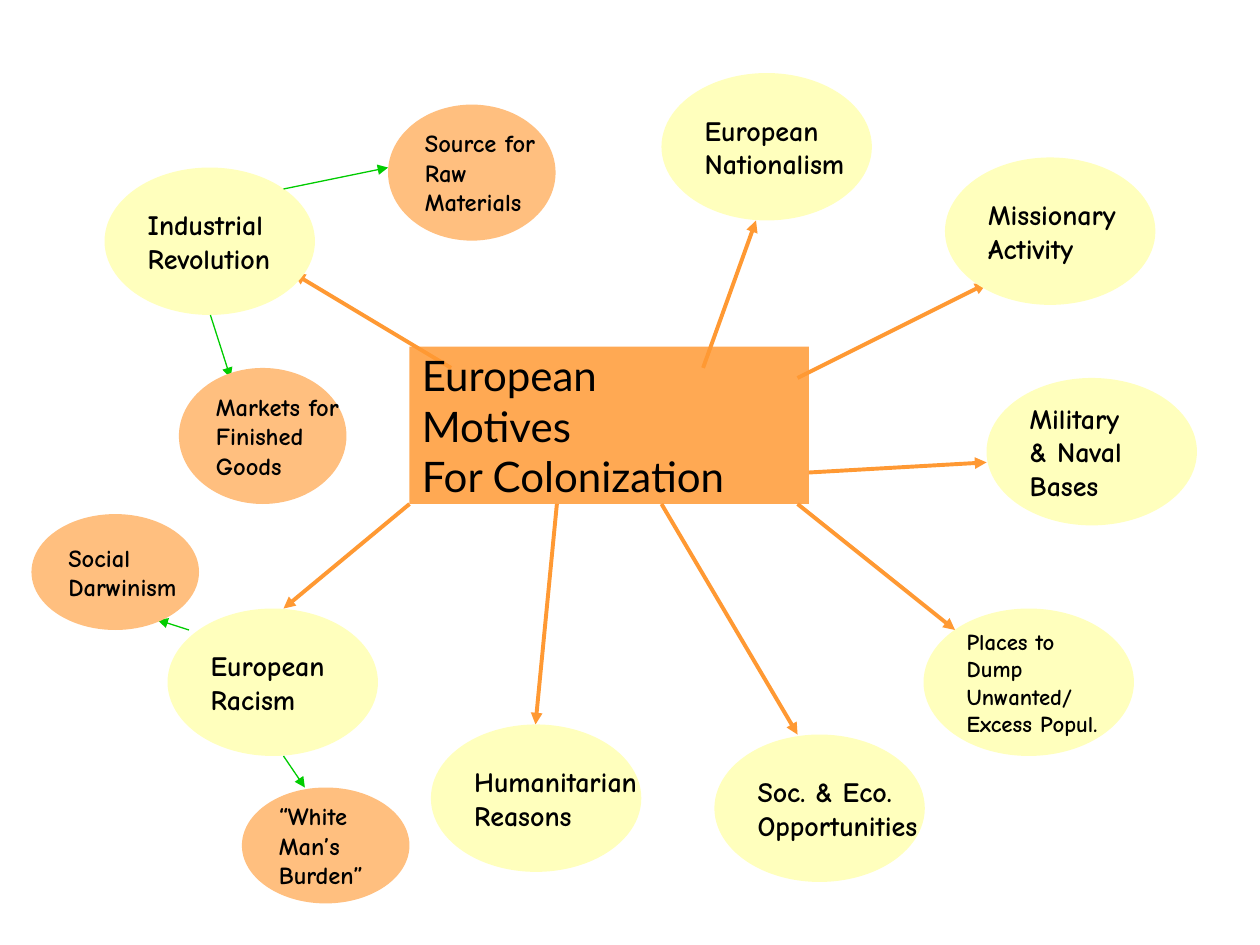
from copy import deepcopy

from pptx import Presentation
from pptx.dml.color import RGBColor
from pptx.enum.shapes import MSO_CONNECTOR, MSO_SHAPE
from pptx.enum.text import MSO_ANCHOR, PP_ALIGN
from pptx.oxml.ns import qn
from pptx.oxml.xmlchemy import OxmlElement
from pptx.util import Inches, Pt


def color(value):
    """Turn a hex string into a colour."""
    return RGBColor.from_string(value)


def write_text(shape, paragraphs, size, font, bold=False, fill="000000"):
    """Write left-aligned paragraphs, whose newlines are line breaks, into a shape."""
    frame = shape.text_frame
    frame.word_wrap = False
    frame.vertical_anchor = MSO_ANCHOR.MIDDLE
    for index, text in enumerate(paragraphs):
        paragraph = frame.add_paragraph() if index else frame.paragraphs[0]
        paragraph.text = text
        paragraph.alignment = PP_ALIGN.LEFT
        for run in paragraph.runs:
            run.font.size = Pt(size)
            run.font.name = font
            run.font.bold = bold
            run.font.color.rgb = color(fill)
        properties = paragraph.runs[0].font._element
        for line_break in paragraph._p.findall(qn("a:br")):
            line_break.append(deepcopy(properties))


class MotiveMap:
    """Style and slide of a concept map."""

    ORANGE = "FF9933"
    GREEN = "00CC00"
    YELLOW = "FFFFBD"
    PEACH = "FFBF7F"
    BUBBLE_FONT = "Comic Neue"
    TITLE_FONT = "Lato"

    def __init__(self, slide):
        """Keep the slide to draw on."""
        self.slide = slide

    def add_block(self, kind, left, top, width, height, fill):
        """Add a filled shape without outline or shadow."""
        shape = self.slide.shapes.add_shape(
            kind, Inches(left), Inches(top), Inches(width), Inches(height))
        shape.shadow.inherit = False
        shape.fill.solid()
        shape.fill.fore_color.rgb = color(fill)
        shape.line.fill.background()
        return shape

    def add_title(self, left, top, width, height, paragraphs):
        """Add the translucent central rectangle."""
        shape = self.add_block(MSO_SHAPE.RECTANGLE, left, top, width, height, self.ORANGE)
        alpha = OxmlElement("a:alpha")
        alpha.set("val", "84000")
        shape._element.spPr.find(qn("a:solidFill"))[0].append(alpha)
        write_text(shape, paragraphs, size=24, font=self.TITLE_FONT)

    def add_arrow(self, start, end, line, width):
        """Add a straight arrow between two points."""
        connector = self.slide.shapes.add_connector(
            MSO_CONNECTOR.STRAIGHT, *(Inches(value) for value in (*start, *end)))
        connector.line.color.rgb = color(line)
        connector.line.width = Pt(width)
        head = OxmlElement("a:tailEnd")
        head.set("type", "triangle")
        connector.line._get_or_add_ln().append(head)
        connector._element.spPr.append(OxmlElement("a:effectLst"))

    def add_motive(self, start, end, left, top, *paragraphs, size=16):
        """Add a main motive with the arrow leading to it."""
        self.add_arrow(start, end, self.ORANGE, 2.25)
        shape = self.add_block(MSO_SHAPE.OVAL, left, top, 1.67, 1.17, self.YELLOW)
        write_text(shape, paragraphs, size=size, font=self.BUBBLE_FONT, bold=True)

    def add_detail(self, start, end, left, top, *paragraphs, height=1.08):
        """Add a detail of a motive with the arrow leading to it."""
        self.add_arrow(start, end, self.GREEN, 0.75)
        shape = self.add_block(MSO_SHAPE.OVAL, left, top, 1.33, height, self.PEACH)
        write_text(shape, paragraphs, size=14, font=self.BUBBLE_FONT, bold=True)


def main():
    """Build and save the slide."""
    presentation = Presentation()
    presentation.slide_width = Inches(10)
    presentation.slide_height = Inches(7.5)
    chart = MotiveMap(presentation.slides.add_slide(presentation.slide_layouts[6]))

    chart.add_motive((3.58, 2.92), (2.33, 2.17), 0.83, 1.33, "Industrial", "Revolution")
    chart.add_detail((2.25, 1.5), (3.08, 1.33), 3.08, 0.83, "Source for", "Raw", "Materials")
    chart.add_detail((1.67, 2.5), (1.83, 3), 1.42, 2.92, "Markets for\nFinished\nGoods")
    chart.add_motive((5.58, 2.92), (6, 1.75), 5.25, 0.58, "European\nNationalism")
    chart.add_motive((6.33, 3), (7.83, 2.25), 7.5, 1.25, "Missionary\nActivity")
    chart.add_motive((6.42, 3.75), (7.83, 3.67), 7.83, 3, "Military\n& Naval\nBases")
    chart.add_title(3.25, 2.75, 3.17, 1.25, ("European", "Motives", "For Colonization"))
    chart.add_motive((6.33, 4), (7.58, 5), 7.33, 4.83,
                     "Places to\nDump\nUnwanted/\nExcess Popul.", size=13)
    chart.add_motive((5.25, 4), (6.33, 5.83), 5.67, 5.83, "Soc. & Eco.\nOpportunities")
    chart.add_motive((4.42, 4), (4.25, 5.75), 3.42, 5.75, "Humanitarian\nReasons")
    chart.add_motive((3.25, 4), (2.25, 4.83), 1.33, 4.83, "European\nRacism")
    chart.add_detail((2.25, 6), (2.42, 6.25), 1.92, 6.25,
                     "“White\nMan’s\nBurden”", height=0.92)
    chart.add_detail((1.5, 5), (1.25, 4.92), 0.25, 4.08, "Social\nDarwinism", height=0.92)

    presentation.save("out.pptx")


if __name__ == "__main__":
    main()
